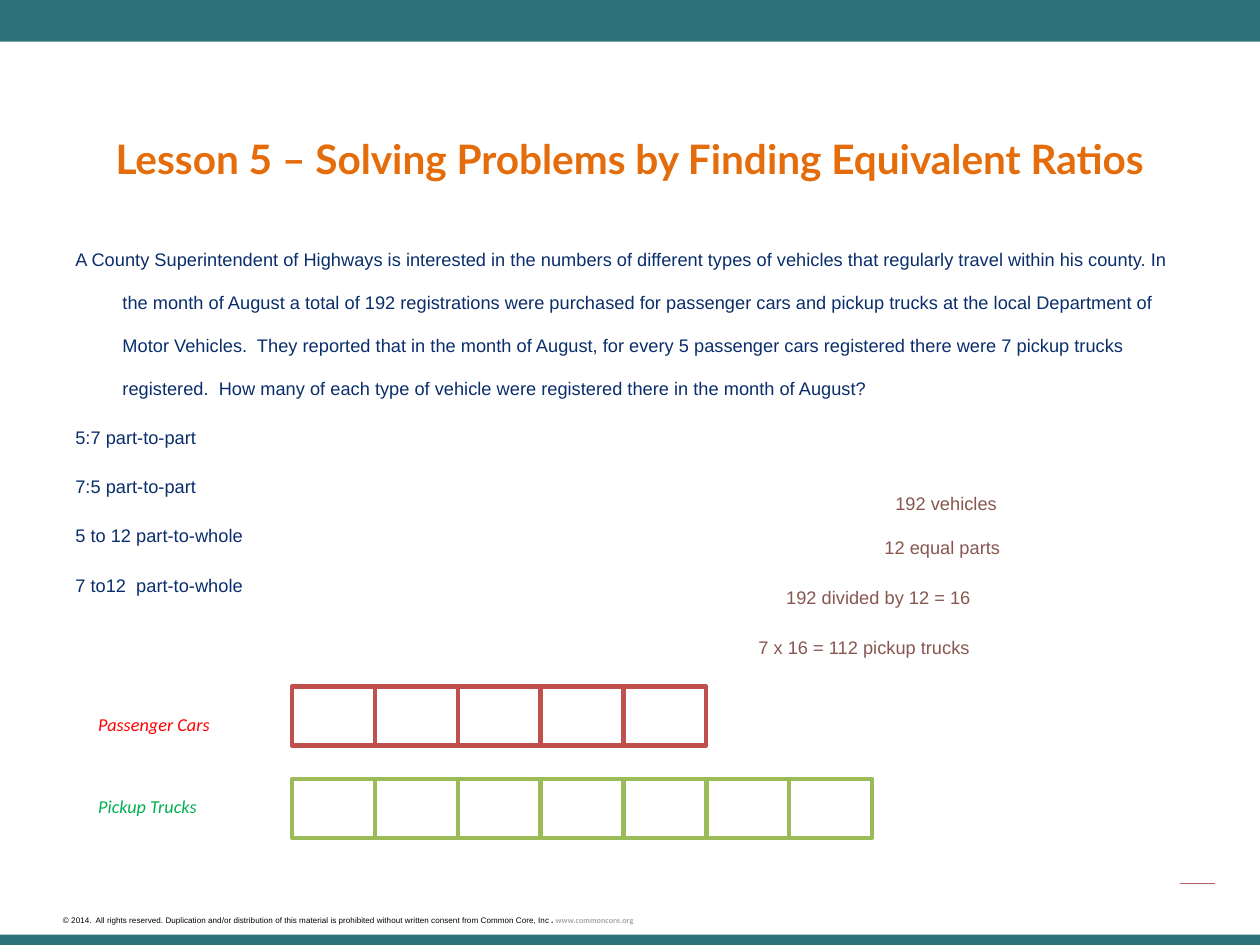
from lxml.etree import SubElement
from pptx import Presentation
from pptx.dml.color import RGBColor
from pptx.enum.shapes import MSO_CONNECTOR as Connector, MSO_SHAPE as Shape
from pptx.enum.text import MSO_ANCHOR as Anchor, PP_ALIGN as Align
from pptx.oxml.ns import qn
from pptx.util import Cm, Pt

TEAL = "2D7278"
NAVY = "0A2D6B"
BROWN = "87564F"
CELL_WIDTH, CELL_HEIGHT = 1.67, 1.19

PROBLEM = [
    "A County Superintendent of Highways is interested in the numbers of "
    "different types of vehicles that regularly travel within his county. "
    "In the month of August a total of 192 registrations were purchased for "
    "passenger cars and pickup trucks at the local Department of Motor "
    "Vehicles.  They reported that in the month of August, for every 5 "
    "passenger cars registered there were 7 pickup trucks registered.  How "
    "many of each type of vehicle were registered there in the month of "
    "August?",
    "5:7 part-to-part",
    "7:5 part-to-part",
    "5 to 12 part-to-whole",
    "7 to12  part-to-whole",
]
STEPS = [
    ("192 vehicles", 17.8, 9.37, 5.26),
    ("12 equal parts", 17.58, 10.26, 5.72),
    ("192 divided by 12 = 16", 15.6, 11.27, 8.15),
    ("7 x 16 = 112 pickup trucks", 15.04, 12.27, 8.41),
]
TAPES = [
    ("Passenger Cars", "FF0000", "C0504D", 5, 13.69, 13.84, 1.15),
    ("Pickup Trucks", "00B050", "9BBB59", 7, 15.49, 15.7, 1),
]


def color(value):
    return RGBColor.from_string(value)


def add_rect(slide, left, top, width, height, fill, outline=None):
    rect = slide.shapes.add_shape(
        Shape.RECTANGLE, Cm(left), Cm(top), Cm(width), Cm(height))
    rect.shadow.inherit = False
    rect.fill.solid()
    rect.fill.fore_color.rgb = color(fill)
    if outline:
        rect.line.color.rgb = color(outline)
        rect.line.width = Pt(2.5)
    else:
        rect.line.fill.background()


def add_rule(slide, left, top, right, stroke):
    rule = slide.shapes.add_connector(
        Connector.STRAIGHT, Cm(left), Cm(top), Cm(right), Cm(top))
    rule.line.color.rgb = color(stroke)
    rule.line.width = Pt(0.5)
    SubElement(rule._element.spPr, qn("a:effectLst"))


def add_frame(slide, left, top, width, height, anchor=Anchor.TOP):
    frame = slide.shapes.add_textbox(
        Cm(left), Cm(top), Cm(width), Cm(height)).text_frame
    frame.word_wrap = True
    frame.vertical_anchor = anchor
    return frame


def add_run(paragraph, text, size, ink, face="Arial", bold=False, italic=False):
    run = paragraph.add_run()
    run.text = text
    font = run.font
    font.size = Pt(size)
    font.name = face
    font.bold = bold
    font.italic = italic
    font.color.rgb = color(ink)
    font._element.set("baseline", "-25000")


def add_footer(slide):
    frame = add_frame(slide, 1.27, 18.26, 15.34, 0.33)
    frame.margin_left = frame.margin_right = 0
    frame.margin_top = frame.margin_bottom = 0
    notice = frame.paragraphs[0]
    add_run(notice, "© 2014.  All rights reserved. Duplication and/or "
            "distribution of this material is prohibited without written "
            "consent from Common Core, Inc", 8, "000000")
    add_run(notice, ". ", 8, "000000", bold=True)
    add_run(notice, "www.commoncore.org", 8, "A6A6A6", "Calibri", bold=True)


def add_title(slide):
    title = add_frame(slide, 1.27, 1.57, 22.86, 2.29, Anchor.MIDDLE).paragraphs[0]
    title.alignment = Align.CENTER
    add_run(title, "Lesson 5 – Solving Problems by Finding Equivalent Ratios",
            40, "E46C0A", "Lato", bold=True)


def add_problem(slide):
    frame = add_frame(slide, 1.27, 4.45, 22.86, 8.25)
    for index, text in enumerate(PROBLEM):
        paragraph = frame.add_paragraph() if index else frame.paragraphs[0]
        if index:
            paragraph.space_before = Pt(3.6)
        properties = paragraph._p.get_or_add_pPr()
        properties.set("marL", str(Cm(0.95)))
        properties.set("indent", str(Cm(-0.95)))
        add_run(paragraph, text, 18, NAVY)


def add_tape(slide, label, ink, outline, parts, label_top, tape_top, spacing):
    for part in range(parts):
        add_rect(slide, 5.89 + part * CELL_WIDTH, tape_top,
                 CELL_WIDTH, CELL_HEIGHT, "FFFFFF", outline)
    caption = add_frame(slide, 1.73, label_top, 3.99, 1.55).paragraphs[0]
    caption.line_spacing = spacing
    add_run(caption, label, 18, ink, "Calibri", italic=True)


def main():
    deck = Presentation()
    deck.slide_width, deck.slide_height = Cm(25.4), Cm(19.05)
    slide = deck.slides.add_slide(deck.slide_layouts[6])
    add_rect(slide, 0, 0, 25.4, 0.84, TEAL)
    add_rect(slide, 0, 18.84, 25.4, 0.21, TEAL)
    add_rule(slide, 23.78, 17.81, 24.49, "B4695A")
    add_footer(slide)
    add_title(slide)
    add_problem(slide)
    for tape in TAPES:
        add_tape(slide, *tape)
    for text, left, top, width in STEPS:
        step = add_frame(slide, left, top, width, 1.02).paragraphs[0]
        add_run(step, text, 18, BROWN)
    deck.save("out.pptx")


if __name__ == "__main__":
    main()
